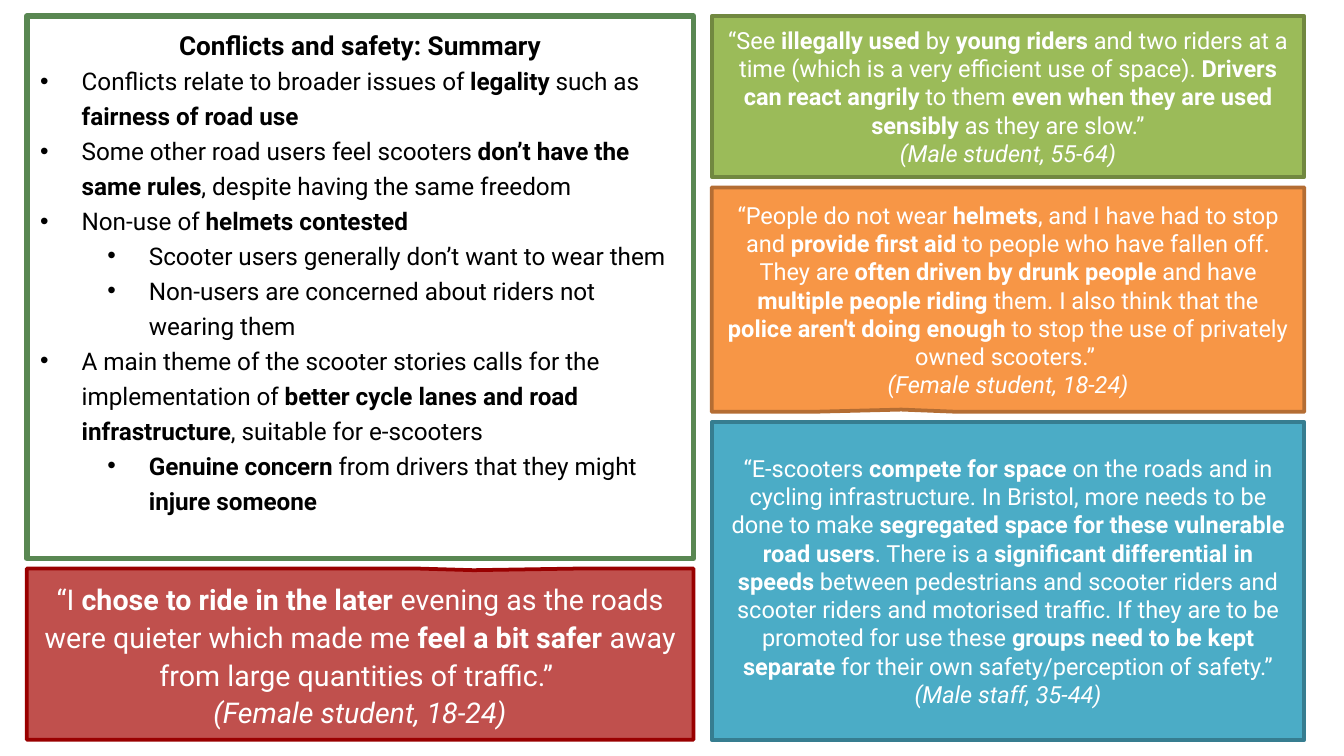
from pptx import Presentation
from pptx.dml.color import RGBColor
from pptx.enum.shapes import MSO_SHAPE
from pptx.enum.text import MSO_ANCHOR, PP_ALIGN
from pptx.oxml import parse_xml
from pptx.oxml.ns import nsdecls
from pptx.util import Emu, Pt

SCALE = 4572
FONT = "Roboto"


def px(n):
    return Emu(n * SCALE)


def color(code):
    return RGBColor.from_string(code)


class Deck:
    def __init__(self, wide, high):
        self.prs = Presentation()
        self.prs.slide_width = px(wide)
        self.prs.slide_height = px(high)
        self.slide = self.prs.slides.add_slide(self.prs.slide_layouts[6])

    def box(self, kind, place, fill, line, width, anchor):
        shape = self.slide.shapes.add_shape(kind, *map(px, place))
        shape.shadow.inherit = False
        shape.fill.solid()
        shape.fill.fore_color.rgb = color(fill)
        shape.line.color.rgb = color(line)
        shape.line.width = Pt(width)
        frame = shape.text_frame
        frame.word_wrap = True
        frame.vertical_anchor = anchor
        frame.margin_left = frame.margin_right = px(20)
        frame.margin_top = frame.margin_bottom = px(10)
        return shape

    def para(self, frame, first, align, gap):
        para = frame.paragraphs[0] if first else frame.add_paragraph()
        para.alignment = align
        para.line_spacing = gap
        return para

    def run(self, para, text, size, ink, bold=False, slant=False):
        run = para.add_run()
        run.text = text
        run.font.name = FONT
        run.font.size = Pt(size)
        run.font.color.rgb = color(ink)
        run.font.bold = bold
        run.font.italic = slant

    def mixed(self, para, parts, size, ink):
        for i, text in enumerate(parts):
            if text:
                self.run(para, text, size, ink, bold=i % 2 == 1)

    def quote(self, place, tip, fill, line, parts, source, size=12.6, gap=1.0):
        kind = MSO_SHAPE.RECTANGULAR_CALLOUT
        shape = self.box(kind, place, fill, line, 2, MSO_ANCHOR.MIDDLE)
        for i, value in enumerate(tip):
            shape.adjustments[i] = value
        frame = shape.text_frame
        para = self.para(frame, True, PP_ALIGN.CENTER, gap)
        self.mixed(para, parts, size, "FFFFFF")
        para = self.para(frame, False, PP_ALIGN.CENTER, gap)
        self.run(para, source, size, "FFFFFF", slant=True)

    def bullet(self, frame, level, parts):
        para = self.para(frame, False, PP_ALIGN.LEFT, 1.2)
        para.level = level
        props = para._p.get_or_add_pPr()
        props.set("marL", str(px(62 + 100 * level)))
        props.set("indent", str(px(-62)))
        for body in (
            '<a:buClr {}><a:srgbClr val="000000"/></a:buClr>',
            '<a:buFont {} typeface="Arial"/>',
            '<a:buChar {} char="•"/>',
        ):
            props.append(parse_xml(body.format(nsdecls("a"))))
        self.mixed(para, parts, 13, "000000")

    def summary(self, place, head, points):
        shape = self.box(MSO_SHAPE.RECTANGLE, place, "FFFFFF", "598752", 3, MSO_ANCHOR.TOP)
        frame = shape.text_frame
        para = self.para(frame, True, PP_ALIGN.CENTER, 1.2)
        self.run(para, head, 14, "000000", bold=True)
        for level, parts in points:
            self.bullet(frame, level, parts)


POINTS = [
    (0, ["Conflicts relate to broader issues of ", "legality", " such as ",
         "fairness of road use"]),
    (0, ["Some other road users feel scooters ", "don’t have the same rules",
         ", despite having the same freedom"]),
    (0, ["Non-use of ", "helmets contested"]),
    (1, ["Scooter users generally don’t want to wear them"]),
    (1, ["Non-users are concerned about riders not wearing them"]),
    (0, ["A main theme of the scooter stories calls for the implementation of ",
         "better cycle lanes and road infrastructure", ", suitable for e-scooters"]),
    (1, ["", "Genuine concern ", "from drivers that they might ", "injure someone"]),
]

EVENING = [
    "“I ", "chose to ride in the later ",
    "evening as the roads were quieter which made me ", "feel a bit safer",
    " away from large quantities of traffic.” ",
]

SPACE = [
    "“E-scooters ", "compete for space ",
    "on the roads and in cycling infrastructure. In Bristol, more needs to be done to make ",
    "segregated space for these vulnerable road users", ". There is a ",
    "significant differential in speeds ",
    "between pedestrians and scooter riders and scooter riders and motorised traffic. "
    "If they are to be promoted for use these ",
    "groups need to be kept separate ", "for their own safety/perception of safety.”",
]

ANGER = [
    "“See ", "illegally used ", "by ", "young riders ",
    "and two riders at a time (which is a very efficient use of space). ",
    "Drivers can react angrily ", "to them ", "even when they are used sensibly ",
    "as they are slow.”",
]

HELMETS = [
    "“People do not wear ", "helmets", ", and I have had to stop and ",
    "provide first aid ", "to people who have fallen off. They are ",
    "often driven by drunk people ", "and have ", "multiple people riding ",
    "them. I also think that the ", "police aren't doing enough ",
    "to stop the use of privately owned scooters.” ",
]


def main():
    deck = Deck(2000, 1125)
    left, right = (40, 992), (1059, 882)

    def place(col, top, high):
        return col[0], top, col[1], high

    deck.quote(place(left, 846, 255), (0.17, -0.49), "C0504D", "990000",
               EVENING, "(Female student, 18-24)", 15.3, 1.1)
    deck.quote(place(right, 628, 473), (0.06, -0.5), "4BACC6", "367D90",
               SPACE, "(Male staff, 35-44)")
    deck.quote(place(right, 24, 239), (0.5, 0.26), "9BBB59", "718840",
               ANGER, "(Male student, 55-64)")
    deck.quote(place(right, 279, 334), (-0.18, 0.49), "F79646", "B46D33",
               HELMETS, "(Female student, 18-24)")
    deck.summary(place(left, 24, 807), "Conflicts and safety: Summary", POINTS)
    deck.prs.save("out.pptx")


if __name__ == "__main__":
    main()
